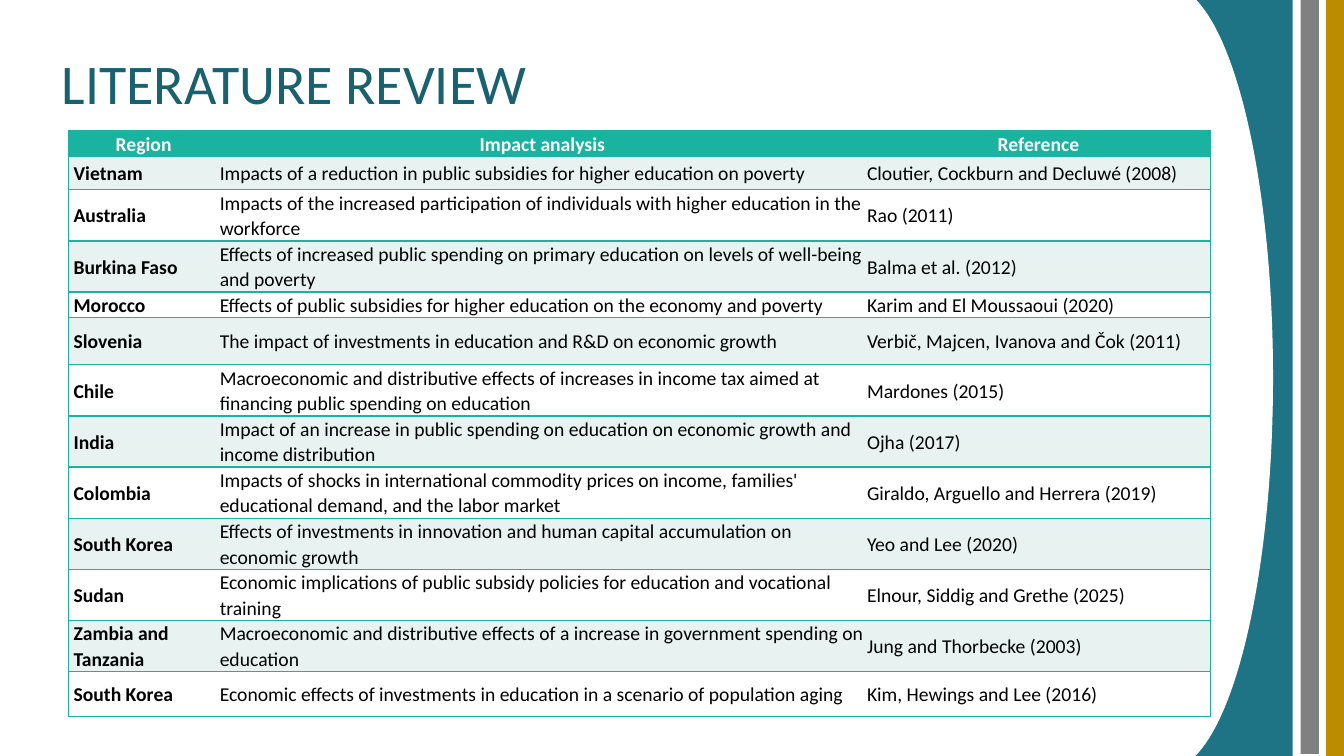
from typing import NamedTuple

from lxml import etree
from pptx import Presentation
from pptx.dml.color import RGBColor
from pptx.enum import shapes, text
from pptx.oxml import ns
from pptx.util import Inches, Pt

WHITE = RGBColor(0xFF, 0xFF, 0xFF)
BLACK = RGBColor(0, 0, 0)
BLUE = RGBColor(0x1E, 0x73, 0x84)
GRAY = RGBColor(0x80, 0x80, 0x80)
GOLD = RGBColor(0xBB, 0x8B, 0x00)
NAVY = RGBColor(0x1A, 0x61, 0x6F)
TEAL = RGBColor(0x1A, 0xB3, 0x9F)
MINT = RGBColor(0xE8, 0xF2, 0xF0)
FONT = "Calibri"


class Band(NamedTuple):
    kind: shapes.MSO_SHAPE
    left: float
    top: float
    width: float
    height: float
    color: RGBColor


class Study(NamedTuple):
    region: str
    impact: str
    source: str
    height: float = 0.5


BANDS = [
    Band(shapes.MSO_SHAPE.RECTANGLE, 11.58, 0, 1.24, 7.5, BLUE),
    Band(shapes.MSO_SHAPE.RECTANGLE, 12.9, -0.02, 0.18, 7.5, GRAY),
    Band(shapes.MSO_SHAPE.RECTANGLE, 13.15, 0, 0.18, 7.5, GOLD),
    Band(shapes.MSO_SHAPE.OVAL, 10.54, -0.14, 2.08, 7.77, WHITE),
]
WIDTHS = [1.49, 6.42, 3.42]
STUDIES = [
    Study("Region", "Impact analysis", "Reference", 0.25),
    Study("Vietnam",
          "Impacts of a reduction in public subsidies for higher education on poverty",
          "Cloutier, Cockburn and Decluwé (2008)", 0.33),
    Study("Australia",
          "Impacts of the increased participation of individuals with higher education "
          "in the workforce",
          "Rao (2011)"),
    Study("Burkina Faso",
          "Effects of increased public spending on primary education on levels of "
          "well-being and poverty",
          "Balma et al. (2012)"),
    Study("Morocco",
          "Effects of public subsidies for higher education on the economy and poverty",
          "Karim and El Moussaoui (2020)", 0.25),
    Study("Slovenia",
          "The impact of investments in education and R&D on economic growth",
          "Verbič, Majcen, Ivanova and Čok (2011)", 0.47),
    Study("Chile",
          "Macroeconomic and distributive effects of increases in income tax aimed at "
          "financing public spending on education",
          "Mardones (2015)"),
    Study("India",
          "Impact of an increase in public spending on education on economic growth "
          "and income distribution",
          "Ojha (2017)"),
    Study("Colombia",
          "Impacts of shocks in international commodity prices on income, families' "
          "educational demand, and the labor market",
          "Giraldo, Arguello and Herrera (2019)"),
    Study("South Korea",
          "Effects of investments in innovation and human capital accumulation on "
          "economic growth",
          "Yeo and Lee (2020)"),
    Study("Sudan",
          "Economic implications of public subsidy policies for education and "
          "vocational training",
          "Elnour, Siddig and Grethe (2025)"),
    Study("Zambia and\nTanzania",
          "Macroeconomic and distributive effects of a increase in government spending "
          "on education",
          "Jung and Thorbecke (2003)"),
    Study("South Korea",
          "Economic effects of investments in education in a scenario of population aging",
          "Kim, Hewings and Lee (2016)", 0.45),
]


def add_band(slide, band: Band) -> None:
    box = map(Inches, (band.left, band.top, band.width, band.height))
    shape = slide.shapes.add_shape(band.kind, *box)
    shape.shadow.inherit = False
    shape.fill.solid()
    shape.fill.fore_color.rgb = band.color
    if band.kind == shapes.MSO_SHAPE.OVAL:
        shape.line.color.rgb = WHITE
        shape.line.width = Pt(0.85)
    else:
        shape.line.fill.background()


def set_title(slide) -> None:
    title = slide.shapes.title
    title.element.getparent().append(title.element)
    title.left, title.top = Inches(0.51), Inches(0.43)
    title.width, title.height = Inches(11.5), Inches(0.86)
    frame = title.text_frame
    frame.text = "LITERATURE REVIEW"
    frame.word_wrap = True
    frame.auto_size = text.MSO_AUTO_SIZE.NONE
    frame.vertical_anchor = text.MSO_ANCHOR.MIDDLE
    line = frame.paragraphs[0]
    line.alignment = text.PP_ALIGN.LEFT
    line.line_spacing = 0.9
    font = line.runs[0].font
    font.name, font.size, font.color.rgb = FONT, Pt(40), NAVY


def set_edges(cell, col: int) -> None:
    """Rule the cell above and below, and at the outer sides of the table."""
    props = cell._tc.get_or_add_tcPr()
    shown = {"lnL": col == 0, "lnR": col == len(WIDTHS) - 1, "lnT": True, "lnB": True}
    for spot, (tag, ruled) in enumerate(shown.items()):
        edge = etree.Element(ns.qn(f"a:{tag}"), w=str(Pt(1)))
        if ruled:
            fill = etree.SubElement(edge, ns.qn("a:solidFill"))
            etree.SubElement(fill, ns.qn("a:srgbClr"), val=str(TEAL))
        else:
            etree.SubElement(edge, ns.qn("a:noFill"))
        props.insert(spot, edge)


def fill_cell(cell, words: str, row: int, col: int) -> None:
    head = row == 0
    cell.margin_left = Inches(0.05 if col == 0 and not head else 0.01)
    cell.margin_right = Inches(0.01)
    cell.margin_top = cell.margin_bottom = 0
    cell.vertical_anchor = text.MSO_ANCHOR.MIDDLE
    cell.fill.solid()
    cell.fill.fore_color.rgb = TEAL if head else MINT if row % 2 else WHITE
    cell.text_frame.text = words
    for line in cell.text_frame.paragraphs:
        line.alignment = text.PP_ALIGN.CENTER if head else text.PP_ALIGN.LEFT
        line.line_spacing = 1.07
        font = line.runs[0].font
        font.name, font.size, font.bold = FONT, Pt(14), head or col == 0
        font.color.rgb = WHITE if head else BLACK
    set_edges(cell, col)


def add_studies(slide) -> None:
    tall = sum(study.height for study in STUDIES)
    table = slide.shapes.add_table(
        len(STUDIES), len(WIDTHS), Inches(0.68), Inches(1.3),
        Inches(sum(WIDTHS)), Inches(tall)).table
    table.horz_banding = False
    for col, width in enumerate(WIDTHS):
        table.columns[col].width = Inches(width)
    for row, study in enumerate(STUDIES):
        table.rows[row].height = Inches(study.height)
        for col, words in enumerate((study.region, study.impact, study.source)):
            fill_cell(table.cell(row, col), words, row, col)


def main() -> None:
    deck = Presentation()
    deck.slide_width, deck.slide_height = Inches(13.33), Inches(7.5)
    slide = deck.slides.add_slide(deck.slide_layouts.get_by_name("Title Only"))
    for band in BANDS:
        add_band(slide, band)
    set_title(slide)
    add_studies(slide)
    deck.save("out.pptx")


if __name__ == "__main__":
    main()
